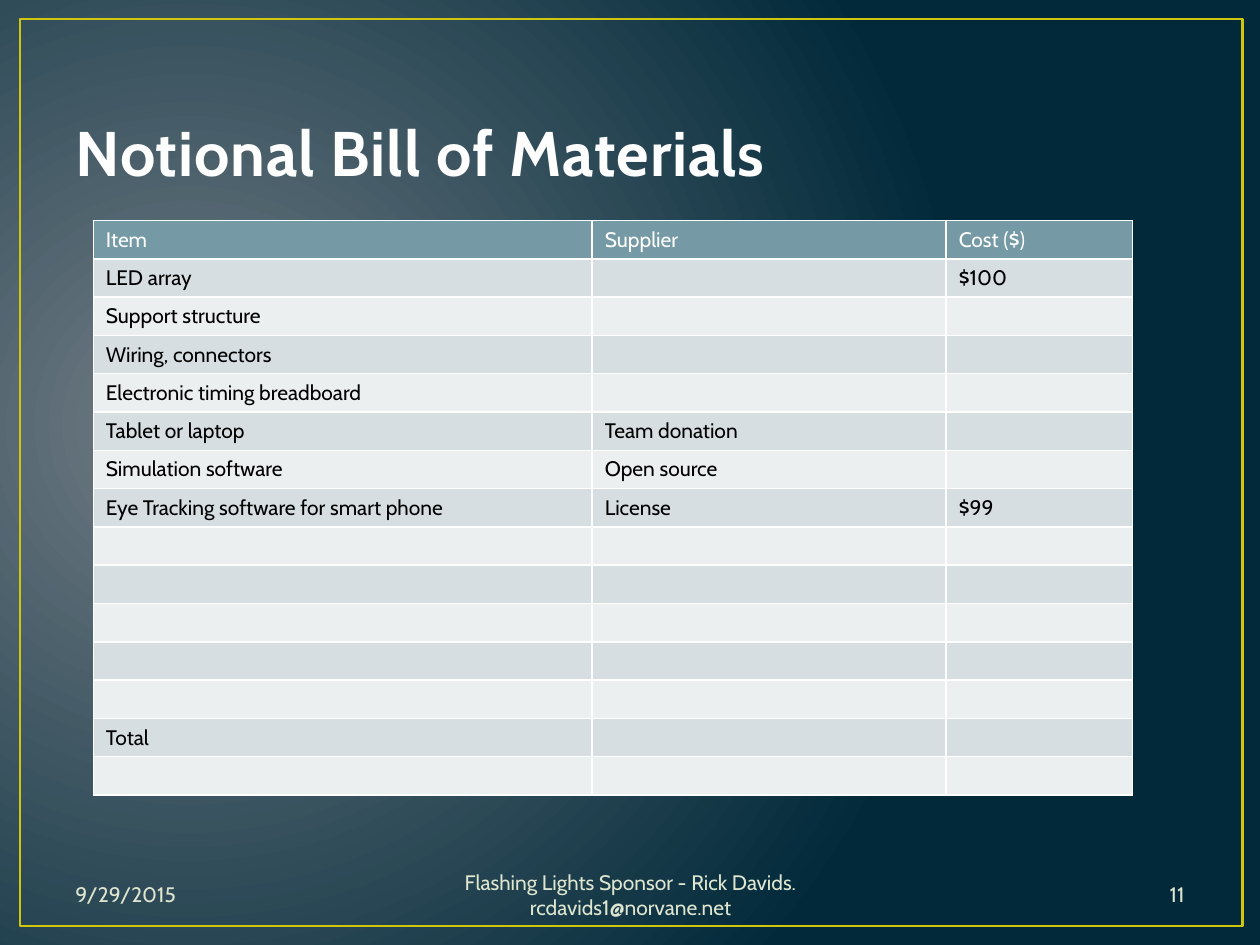
from dataclasses import dataclass

from lxml import etree
from pptx import Presentation
from pptx.dml.color import RGBColor
from pptx.enum.shapes import MSO_SHAPE
from pptx.enum.text import MSO_ANCHOR, PP_ALIGN
from pptx.oxml.ns import qn
from pptx.util import Inches, Pt

RECTANGLE = MSO_SHAPE.RECTANGLE
MIDDLE, BOTTOM = MSO_ANCHOR.MIDDLE, MSO_ANCHOR.BOTTOM
LEFT, CENTER, RIGHT = PP_ALIGN.LEFT, PP_ALIGN.CENTER, PP_ALIGN.RIGHT

FONT = "Cabin"
WHITE = RGBColor(0xFF, 0xFF, 0xFF)
BLACK = RGBColor(0x00, 0x00, 0x00)
TITLE_WHITE = RGBColor(0xFE, 0xFE, 0xFE)
GLOW_GRAY = RGBColor(0x71, 0x7C, 0x84)
NAVY = RGBColor(0x01, 0x29, 0x3A)
FRAME_YELLOW = RGBColor(0xCF, 0xC6, 0x0D)
FOOTER_GREEN = RGBColor(0xDF, 0xE6, 0xD0)
HEADER_TEAL = RGBColor(0x75, 0x9A, 0xA5)
BANDS = (RGBColor(0xEC, 0xEF, 0xF0), RGBColor(0xD6, 0xDE, 0xE1))

COLUMN_WIDTHS = (3.96, 2.81, 1.48)
ROW_HEIGHT = 0.3
BLANK = ("", "", "")
MATERIALS = [
    ("Item", "Supplier", "Cost ($)"),
    ("LED array", "", "$100"),
    ("Support structure", "", ""),
    ("Wiring, connectors", "", ""),
    ("Electronic timing breadboard", "", ""),
    ("Tablet or laptop", "Team donation", ""),
    ("Simulation software", "Open source", ""),
    ("Eye Tracking software for smart phone", "License", "$99"),
    *[BLANK] * 5,
    ("Total", "", ""),
    BLANK,
]


@dataclass
class FooterText:
    text: str
    left: float
    width: float
    alignment: PP_ALIGN


FOOTERS = [
    FooterText("9/29/2015", 0.5, 2.33, LEFT),
    FooterText("Flashing Lights Sponsor - Rick Davids. rcdavids1@norvane.net", 3.1, 3.81, CENTER),
    FooterText("11", 7.17, 2.33, RIGHT),
]


def format_paragraph(paragraph, size: float, color: RGBColor, bold: bool = False) -> None:
    font = paragraph.font
    font.name, font.size, font.bold = FONT, Pt(size), bold
    font.color.rgb = color


def paint_background(slide) -> None:
    fill = slide.background.fill
    fill.gradient()
    for stop, color in zip(fill.gradient_stops, (GLOW_GRAY, NAVY)):
        stop.color.rgb = color
    gradient = slide.element.find(".//" + qn("a:gradFill"))
    linear = gradient.find(qn("a:lin"))
    radial = etree.Element(qn("a:path"), path="circle")
    etree.SubElement(radial, qn("a:fillToRect"), l="15000", t="50000", r="85000", b="60000")
    gradient.replace(linear, radial)


def add_frame(slide) -> None:
    frame = slide.shapes.add_shape(RECTANGLE, Inches(0.16), Inches(0.15), Inches(9.7), Inches(7.2))
    frame.shadow.inherit = False
    frame.fill.background()
    frame.line.color.rgb = FRAME_YELLOW
    frame.line.width = Pt(1.5)


def set_title(slide, text: str) -> None:
    title = slide.shapes.title
    title.left, title.top, title.width, title.height = map(Inches, (0.5, 0.3, 9, 1.25))
    title.text_frame.text = text
    title.text_frame.vertical_anchor = BOTTOM
    paragraph = title.text_frame.paragraphs[0]
    paragraph.alignment = LEFT
    format_paragraph(paragraph, 36, TITLE_WHITE, bold=True)
    paragraph.runs[0].font._element.set("spc", "50")


def add_cell_borders(cell, color: RGBColor, width: float) -> None:
    properties = cell._tc.get_or_add_tcPr()
    for side in ("lnL", "lnR", "lnT", "lnB"):
        line = etree.SubElement(properties, qn(f"a:{side}"), w=str(Pt(width)))
        solid = etree.SubElement(line, qn("a:solidFill"))
        etree.SubElement(solid, qn("a:srgbClr"), val=str(color))


def fill_cell(cell, text: str, row_index: int) -> None:
    is_header = row_index == 0
    cell.text = text
    paragraph = cell.text_frame.paragraphs[0]
    format_paragraph(paragraph, 12, WHITE if is_header else BLACK)
    if not text:
        end = etree.SubElement(paragraph._p, qn("a:endParaRPr"), sz="1200")
        etree.SubElement(end, qn("a:latin"), typeface=FONT)
    add_cell_borders(cell, WHITE, 1)
    cell.fill.solid()
    cell.fill.fore_color.rgb = HEADER_TEAL if is_header else BANDS[row_index % 2]


def add_materials_table(slide) -> None:
    table = slide.shapes.add_table(
        len(MATERIALS), len(COLUMN_WIDTHS), Inches(0.74), Inches(1.75),
        Inches(sum(COLUMN_WIDTHS)), Inches(ROW_HEIGHT * len(MATERIALS)),
    ).table
    for column, width in zip(table.columns, COLUMN_WIDTHS):
        column.width = Inches(width)
    for row_index, texts in enumerate(MATERIALS):
        for column_index, text in enumerate(texts):
            fill_cell(table.cell(row_index, column_index), text, row_index)


def add_footer(slide, footer: FooterText) -> None:
    box = slide.shapes.add_textbox(
        Inches(footer.left), Inches(6.9), Inches(footer.width), Inches(0.4)
    )
    frame = box.text_frame
    frame.word_wrap = True
    frame.vertical_anchor = MIDDLE
    frame.text = footer.text
    paragraph = frame.paragraphs[0]
    paragraph.alignment = footer.alignment
    format_paragraph(paragraph, 12, FOOTER_GREEN)


def main() -> None:
    presentation = Presentation()
    presentation.slide_width, presentation.slide_height = Inches(10), Inches(7.5)
    slide = presentation.slides.add_slide(presentation.slide_layouts[5])
    paint_background(slide)
    add_frame(slide)
    set_title(slide, "Notional Bill of Materials")
    add_materials_table(slide)
    for footer in FOOTERS:
        add_footer(slide, footer)
    presentation.save("out.pptx")


if __name__ == "__main__":
    main()
